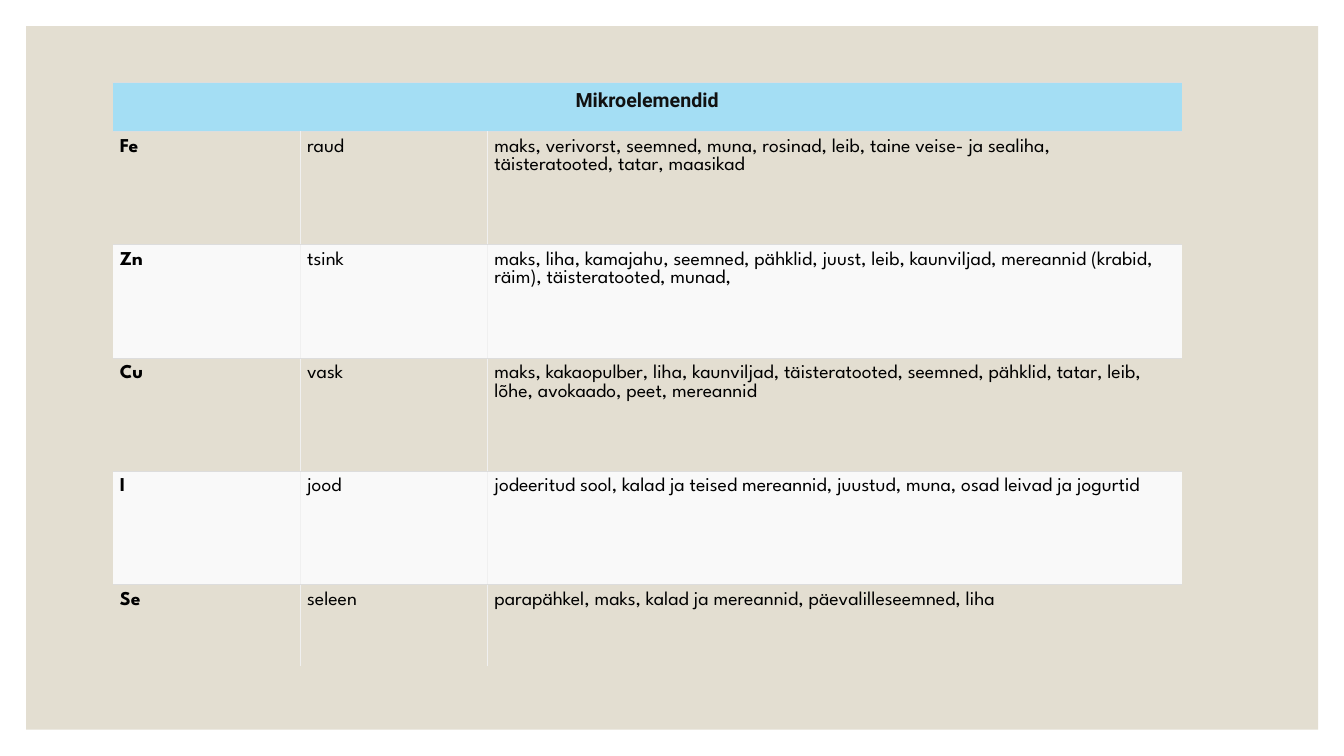
from typing import NamedTuple

from lxml import etree
from pptx import Presentation
from pptx.dml.color import RGBColor
from pptx.enum.shapes import MSO_SHAPE
from pptx.enum.text import PP_ALIGN
from pptx.oxml.ns import qn
from pptx.util import Cm, Pt

RECT = MSO_SHAPE.RECTANGLE
LEFT, CENTER = PP_ALIGN.LEFT, PP_ALIGN.CENTER

SAND, SKY, PALE = "E3DED1", "A4DEF4", "F9F9F9"
ROW_LINE, COLUMN_LINE = "DDDDDD", "F0F0F0"
COLUMN_WIDTHS = (4.72, 4.72, 17.5)
HEADER_HEIGHT, ROW_HEIGHT, LAST_HEIGHT = 1.24, 2.85, 2.06
MARGIN = Cm(0.18)
HEADER_FONT = {"name": "Roboto", "size": Pt(14), "bold": True}
SYMBOL_FONT = {"name": "League Spartan", "size": Pt(14), "bold": True}
BODY_FONT = {**SYMBOL_FONT, "bold": False}


class Element(NamedTuple):
    symbol: str
    name: str
    sources: str


ELEMENTS = [
    Element("Fe", "raud", "maks, verivorst, seemned, muna, rosinad, leib, "
            "taine veise- ja sealiha, täisteratooted, tatar, maasikad"),
    Element("Zn", "tsink", "maks, liha, kamajahu, seemned, pähklid, juust, leib, "
            "kaunviljad, mereannid (krabid, räim), täisteratooted, munad,"),
    Element("Cu", "vask", "maks, kakaopulber, liha, kaunviljad, täisteratooted, "
            "seemned, pähklid, tatar, leib, lõhe, avokaado, peet, mereannid"),
    Element("I", "jood", "jodeeritud sool, kalad ja teised mereannid, juustud, "
            "muna, osad leivad ja jogurtid"),
    Element("Se", "seleen", "parapähkel, maks, kalad ja mereannid, "
            "päevalilleseemned, liha"),
]


def rgb(color: str) -> RGBColor:
    return RGBColor.from_string(color)


def set_borders(cell, **colors: str | None) -> None:
    """Draw the named sides (L, R, T, B) and clear the others."""
    tcPr = cell._tc.get_or_add_tcPr()
    for side in "LRTB":
        ln = etree.SubElement(tcPr, qn(f"a:ln{side}"), w=str(Pt(0.75)))
        color = colors.get(side)
        if color:
            fill = etree.SubElement(ln, qn("a:solidFill"))
            etree.SubElement(fill, qn("a:srgbClr"), val=color)
        else:
            etree.SubElement(ln, qn("a:noFill"))


def set_fill(cell, color: str | None) -> None:
    if color:
        cell.fill.solid()
        cell.fill.fore_color.rgb = rgb(color)
    else:
        cell.fill.background()


def write(cell, text: str, font: dict, color: str, align=LEFT) -> None:
    for side in ("left", "right", "top", "bottom"):
        setattr(cell, f"margin_{side}", MARGIN)
    p = cell.text_frame.paragraphs[0]
    p.alignment = align
    r = p.add_run()
    r.text = text
    for key, value in font.items():
        setattr(r.font, key, value)
    r.font.color.rgb = rgb(color)


def add_panel(s) -> None:
    sp = s.shapes.add_shape(RECT, Cm(0.66), Cm(0.66), Cm(32.56), Cm(17.73))
    sp.shadow.inherit = False
    sp.fill.solid()
    sp.fill.fore_color.rgb = rgb(SAND)
    sp.line.fill.background()


def add_element_table(s) -> None:
    heights = [HEADER_HEIGHT] + [ROW_HEIGHT] * (len(ELEMENTS) - 1) + [LAST_HEIGHT]
    table = s.shapes.add_table(
        len(heights), len(COLUMN_WIDTHS), Cm(2.84), Cm(2.08),
        Cm(sum(COLUMN_WIDTHS)), Cm(sum(heights))).table
    table.first_row = table.horz_banding = False
    for column, width in zip(table.columns, COLUMN_WIDTHS):
        column.width = Cm(width)
    for row, height in zip(table.rows, heights):
        row.height = Cm(height)

    # Header across all columns
    last_col = len(COLUMN_WIDTHS) - 1
    header = table.cell(0, 0)
    header.merge(table.cell(0, last_col))
    for cell in table.rows[0].cells:
        set_borders(cell, T=ROW_LINE, B=ROW_LINE)
        set_fill(cell, SKY)
    write(header, "Mikroelemendid", HEADER_FONT, "111111", CENTER)

    # One row per element, every second one pale
    for i, element in enumerate(ELEMENTS, start=1):
        for j, text in enumerate(element):
            cell = table.cell(i, j)
            set_borders(cell,
                        L=COLUMN_LINE if j > 0 else None,
                        R=COLUMN_LINE if j < last_col else None,
                        T=ROW_LINE,
                        B=ROW_LINE if i < len(ELEMENTS) else None)
            set_fill(cell, PALE if i % 2 == 0 else None)
            write(cell, text, SYMBOL_FONT if j == 0 else BODY_FONT, "000000")


def main() -> None:
    prs = Presentation()
    prs.slide_width, prs.slide_height = Cm(33.87), Cm(19.05)
    s = prs.slides.add_slide(prs.slide_layouts[6])
    add_panel(s)
    add_element_table(s)
    prs.save("out.pptx")


if __name__ == "__main__":
    main()
